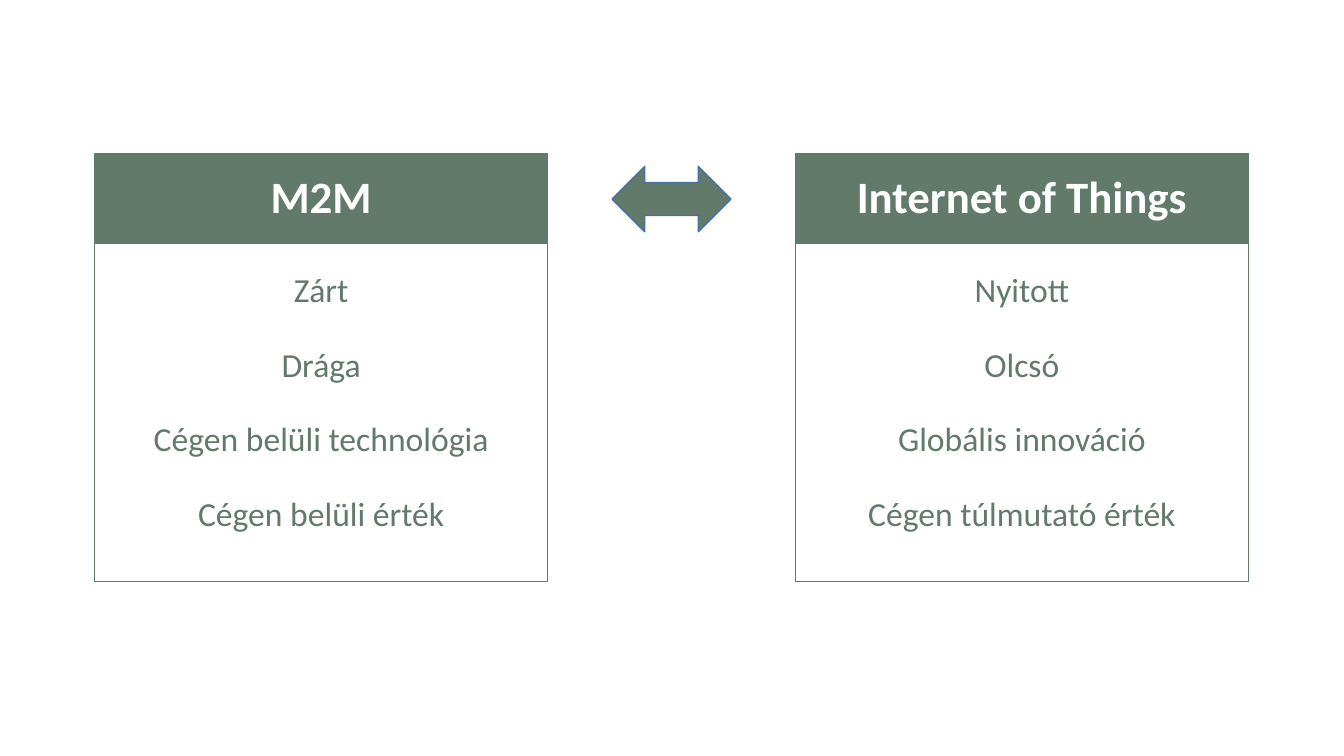
from dataclasses import dataclass

from pptx import Presentation
from pptx.dml.color import RGBColor as RGB
from pptx.enum.shapes import MSO_SHAPE as Shape
from pptx.enum.text import MSO_ANCHOR as Anchor, PP_ALIGN as Align
from pptx.util import Inches, Pt


@dataclass(frozen=True)
class Theme:
    font: str = "Calibri"
    green: str = "617A6A"
    white: str = "FFFFFF"
    blue: str = "43739E"
    head: int = 32
    body: int = 24


THEME = Theme()

# Card layout in inches
TOP, WIDTH = 1.52, 4.49
HEAD, BODY = 0.9, 3.35

CARDS = [
    (0.94, "M2M",
     ["Zárt", "Drága", "Cégen belüli technológia", "Cégen belüli érték"]),
    (7.89, "Internet of Things",
     ["Nyitott", "Olcsó", "Globális innováció", "Cégen túlmutató érték"]),
]


def add_box(slide, kind, left, top, width, height, fill, line, weight=0.75):
    box = slide.shapes.add_shape(
        kind, Inches(left), Inches(top), Inches(width), Inches(height))
    box.shadow.inherit = False
    box.fill.solid()
    box.fill.fore_color.rgb = RGB.from_string(fill)
    box.line.color.rgb = RGB.from_string(line)
    box.line.width = Pt(weight)
    return box


def put_text(box, lines, *, size, color, bold=False, space=1.0,
             anchor=Anchor.TOP):
    frame = box.text_frame
    frame.word_wrap = True
    frame.vertical_anchor = anchor
    for i, line in enumerate(lines):
        para = frame.add_paragraph() if i else frame.paragraphs[0]
        para.alignment = Align.CENTER
        para.line_spacing = space
        para.space_before = Pt(10)
        run = para.add_run()
        run.text = line
        run.font.name = THEME.font
        run.font.size = Pt(size)
        run.font.bold = bold
        run.font.color.rgb = RGB.from_string(color)


def add_card(slide, left, title, items):
    # Title band
    band = add_box(slide, Shape.RECTANGLE, left, TOP, WIDTH, HEAD,
                   THEME.green, THEME.green)
    put_text(band, [title], size=THEME.head, color=THEME.white, bold=True,
             space=0.9, anchor=Anchor.MIDDLE)
    # List of traits
    panel = add_box(slide, Shape.RECTANGLE, left, TOP + HEAD, WIDTH, BODY,
                    THEME.white, THEME.green)
    put_text(panel, items, size=THEME.body, color=THEME.green, space=1.5)


def main():
    deck = Presentation()
    deck.slide_width, deck.slide_height = Inches(13.33), Inches(7.5)
    slide = deck.slides.add_slide(deck.slide_layouts[6])

    # Cards to compare
    for left, title, items in CARDS:
        add_card(slide, left, title, items)

    # Arrow between the titles
    add_box(slide, Shape.LEFT_RIGHT_ARROW, 6.07, 1.65, 1.18, 0.65,
            THEME.green, THEME.blue, weight=1)

    deck.save("out.pptx")


if __name__ == "__main__":
    main()
